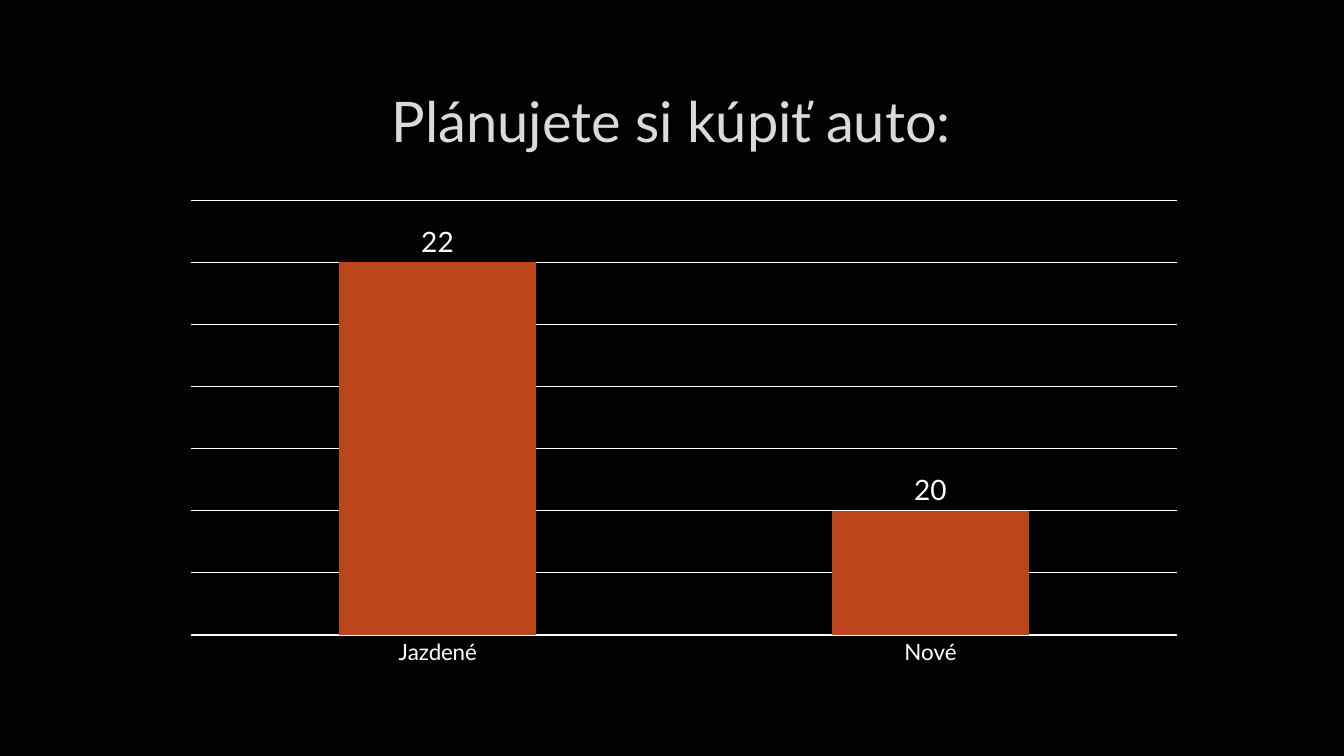
from dataclasses import dataclass

from lxml import etree
from pptx import Presentation
from pptx import util as u
from pptx.chart import data as chart_data
from pptx.dml.color import RGBColor
from pptx.enum import chart as charts, text
from pptx.oxml import ns

BLACK = RGBColor(0x00, 0x00, 0x00)
WHITE = RGBColor(0xFF, 0xFF, 0xFF)
SILVER = RGBColor(0xDA, 0xDA, 0xDA)
RUST = RGBColor(0xBC, 0x45, 0x1B)
FONT = "Lato"
WIDTH, HEIGHT = u.Inches(13.33), u.Inches(7.5)


@dataclass(frozen=True)
class Area:
    left: float
    top: float
    width: float
    height: float

    def lengths(self) -> tuple[int, int, int, int]:
        return (int(self.left * WIDTH), int(self.top * HEIGHT),
                int(self.width * WIDTH), int(self.height * HEIGHT))


@dataclass(frozen=True)
class Answer:
    label: str
    votes: int


TITLE_AREA = Area(0.075, 0.089, 0.849, 0.141)
CHART_AREA = Area(0.127, 0.252, 0.764, 0.639)
PLOT_SHARE = Area(0.02, 0.02, 0.96, 0.9)
ANSWERS = [Answer("Jazdené", 22), Answer("Nové", 20)]


def style_font(font, size: float, color: RGBColor) -> None:
    font.name = FONT
    font.size = u.Pt(size)
    font.color.rgb = color


def style_line(line, color: RGBColor, width: float) -> None:
    line.color.rgb = color
    line.width = u.Pt(width)


def place_plot(chart, share: Area) -> None:
    plot_area = chart._chartSpace.chart.plotArea
    for old in plot_area.findall(ns.qn("c:layout")):
        plot_area.remove(old)
    layout = etree.Element(ns.qn("c:layout"))
    manual = etree.SubElement(layout, ns.qn("c:manualLayout"))
    settings = {"layoutTarget": "inner", "xMode": "edge", "yMode": "edge",
                "x": share.left, "y": share.top, "w": share.width, "h": share.height}
    for tag, value in settings.items():
        etree.SubElement(manual, ns.qn(f"c:{tag}")).set("val", str(value))
    plot_area.insert(0, layout)


def add_title(page, wording: str) -> None:
    title = page.shapes.title
    title.left, title.top, title.width, title.height = TITLE_AREA.lengths()
    title.text_frame.text = wording
    title.text_frame.vertical_anchor = text.MSO_ANCHOR.MIDDLE
    para = title.text_frame.paragraphs[0]
    para.alignment = text.PP_ALIGN.CENTER
    style_font(para.runs[0].font, 40, SILVER)


def add_answer_chart(page, answers: list[Answer]) -> None:
    table = chart_data.CategoryChartData()
    table.categories = [answer.label for answer in answers]
    table.add_series("Series 1", [answer.votes for answer in answers])
    chart = page.shapes.add_chart(
        charts.XL_CHART_TYPE.COLUMN_CLUSTERED, *CHART_AREA.lengths(), table).chart
    chart.has_legend = False
    chart.has_title = False
    style_font(chart.font, 10, WHITE)
    place_plot(chart, PLOT_SHARE)

    categories = chart.category_axis
    categories.major_tick_mark = charts.XL_TICK_MARK.NONE
    style_font(categories.tick_labels.font, 16, WHITE)
    style_line(categories.format.line, WHITE, 1.5)

    values = chart.value_axis
    values.minimum_scale, values.maximum_scale, values.major_unit = 19, 22.5, 0.5
    values.visible = False
    style_line(values.major_gridlines.format.line, WHITE, 0.75)

    plot = chart.plots[0]
    plot.gap_width = 150
    plot.vary_by_categories = False
    columns = plot.series[0]
    columns.format.fill.solid()
    columns.format.fill.fore_color.rgb = RUST
    labels = columns.data_labels
    labels.show_value = True
    labels.position = charts.XL_LABEL_POSITION.OUTSIDE_END
    style_font(labels.font, 20, WHITE)


def main() -> None:
    deck = Presentation()
    deck.slide_width, deck.slide_height = WIDTH, HEIGHT
    page = deck.slides.add_slide(deck.slide_layouts.get_by_name("Title Only"))
    page.background.fill.solid()
    page.background.fill.fore_color.rgb = BLACK
    add_title(page, "Plánujete si kúpiť auto:")
    add_answer_chart(page, ANSWERS)
    deck.save("out.pptx")


if __name__ == "__main__":
    main()
